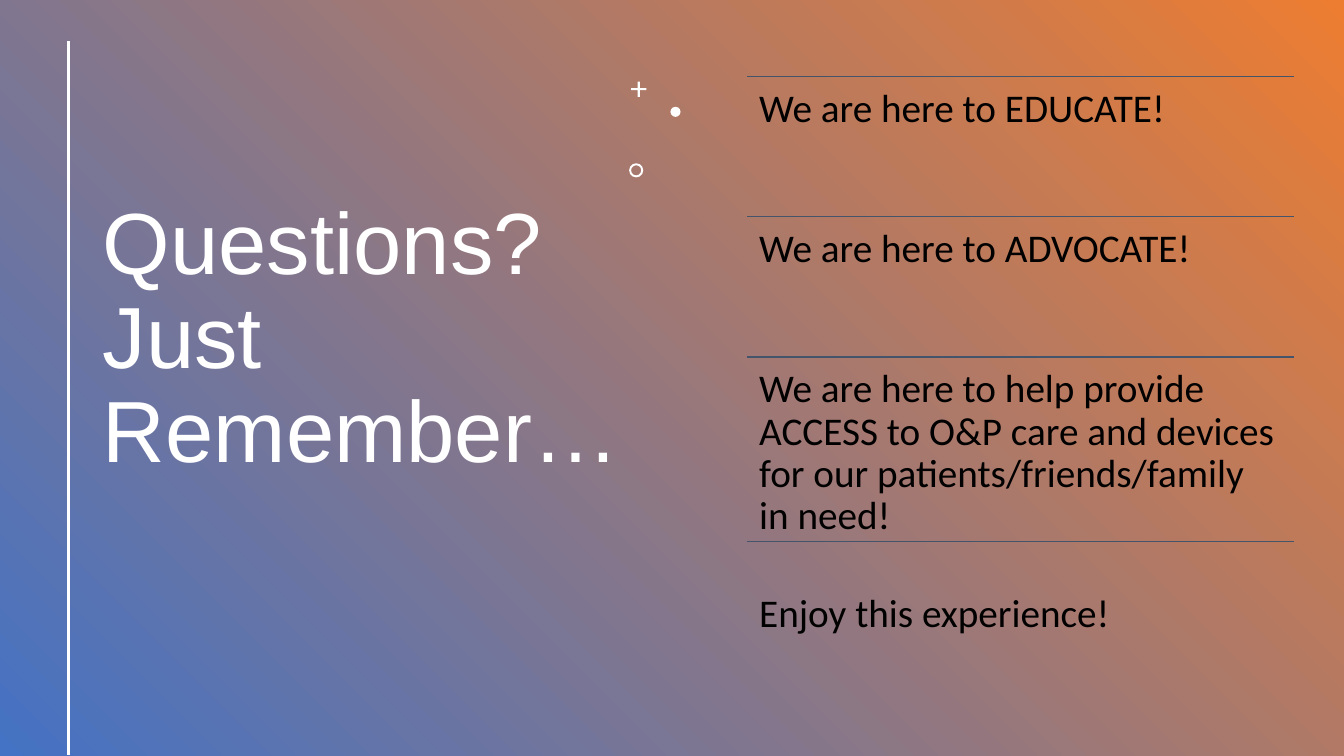
from pptx import Presentation
from pptx.dml.color import RGBColor
from pptx.enum.shapes import MSO_CONNECTOR, MSO_SHAPE as Preset
from pptx.enum.text import MSO_ANCHOR, MSO_AUTO_SIZE, PP_ALIGN
from pptx.oxml.ns import qn
from pptx.util import Inches, Pt
from lxml import etree

WHITE, BLACK, SLATE = "FFFFFF", "000000", "44546A"
BLUE, ORANGE = "4472C4", "ED7D31"


def rgb(code):
    return RGBColor.from_string(code)


def add_rule(x1, y1, x2, y2, color, weight):
    rule = slide.shapes.add_connector(
        MSO_CONNECTOR.STRAIGHT, Inches(x1), Inches(y1), Inches(x2), Inches(y2))
    rule.line.color.rgb = rgb(color)
    rule.line.width = Pt(weight)
    etree.SubElement(rule._element.spPr, qn("a:effectLst"))


deck = Presentation()
deck.slide_width, deck.slide_height = Inches(13.33), Inches(7.5)
slide = deck.slides.add_slide(deck.slide_layouts[5])

backdrop = slide.shapes.add_shape(Preset.RECTANGLE, 0, 0, deck.slide_width, deck.slide_height)
backdrop.shadow.inherit = False
backdrop.line.fill.background()
backdrop.fill.gradient()
backdrop.fill.gradient_angle = 45
for stop, color, position in zip(backdrop.fill.gradient_stops, (BLUE, ORANGE), (0, 1)):
    stop.color.rgb = rgb(color)
    stop.position = position
slide.shapes._spTree.insert(2, backdrop._element)

heading = slide.shapes.title
heading.left, heading.top = Inches(0.92), Inches(1.62)
heading.width, heading.height = Inches(5.75), Inches(3.2)
heading_frame = heading.text_frame
heading_frame.text = "Questions? Just Remember…"
heading_frame.word_wrap = True
heading_frame.auto_size = MSO_AUTO_SIZE.NONE
heading_frame.vertical_anchor = MSO_ANCHOR.BOTTOM
heading_line = heading_frame.paragraphs[0]
heading_line.alignment = PP_ALIGN.LEFT
heading_line.line_spacing = 0.9
heading_font = heading_line.runs[0].font
heading_font.name, heading_font.size = "Arial", Pt(62)
heading_font.color.rgb = rgb(WHITE)

add_rule(0.68, 0.41, 0.68, 7.49, WHITE, 2)

ornaments = [
    (Preset.CROSS, 6.26, 0.81, 0.15, 0.43),
    (Preset.OVAL, 6.65, 1.06, 0.1, None),
    (Preset.DONUT, 6.24, 1.62, 0.14, 0.14),
]
for preset, left, top, size, thickness in ornaments:
    ornament = slide.shapes.add_shape(
        preset, Inches(left), Inches(top), Inches(size), Inches(size))
    ornament.shadow.inherit = False
    ornament.fill.solid()
    ornament.fill.fore_color.rgb = rgb(WHITE)
    ornament.line.fill.background()
    if thickness:
        ornament.adjustments[0] = thickness

column_left, column_width, inset = 7.41, 5.42, 0.12
row_top, row_height, tall_row, lowered = 0.76, 1.39, 1.83, 0.73
reminders = [
    ("We are here to EDUCATE!", row_height, inset),
    ("We are here to ADVOCATE!", row_height, inset),
    ("We are here to help provide ACCESS to O&P care and devices "
     "for our patients/friends/family in need!", tall_row, inset),
    ("Enjoy this experience!", row_height, lowered),
]
for wording, height, top_inset in reminders:
    add_rule(column_left, row_top, column_left + column_width, row_top, SLATE, 1)
    reminder = slide.shapes.add_textbox(
        Inches(column_left), Inches(row_top), Inches(column_width), Inches(height))
    frame = reminder.text_frame
    frame.text = wording
    frame.word_wrap = True
    frame.margin_left = frame.margin_right = frame.margin_bottom = Inches(inset)
    frame.margin_top = Inches(top_inset)
    frame.paragraphs[0].line_spacing = 0.9
    font = frame.paragraphs[0].runs[0].font
    font.name, font.size = "Calibri", Pt(28)
    font.color.rgb = rgb(BLACK)
    row_top += height

deck.save("out.pptx")
